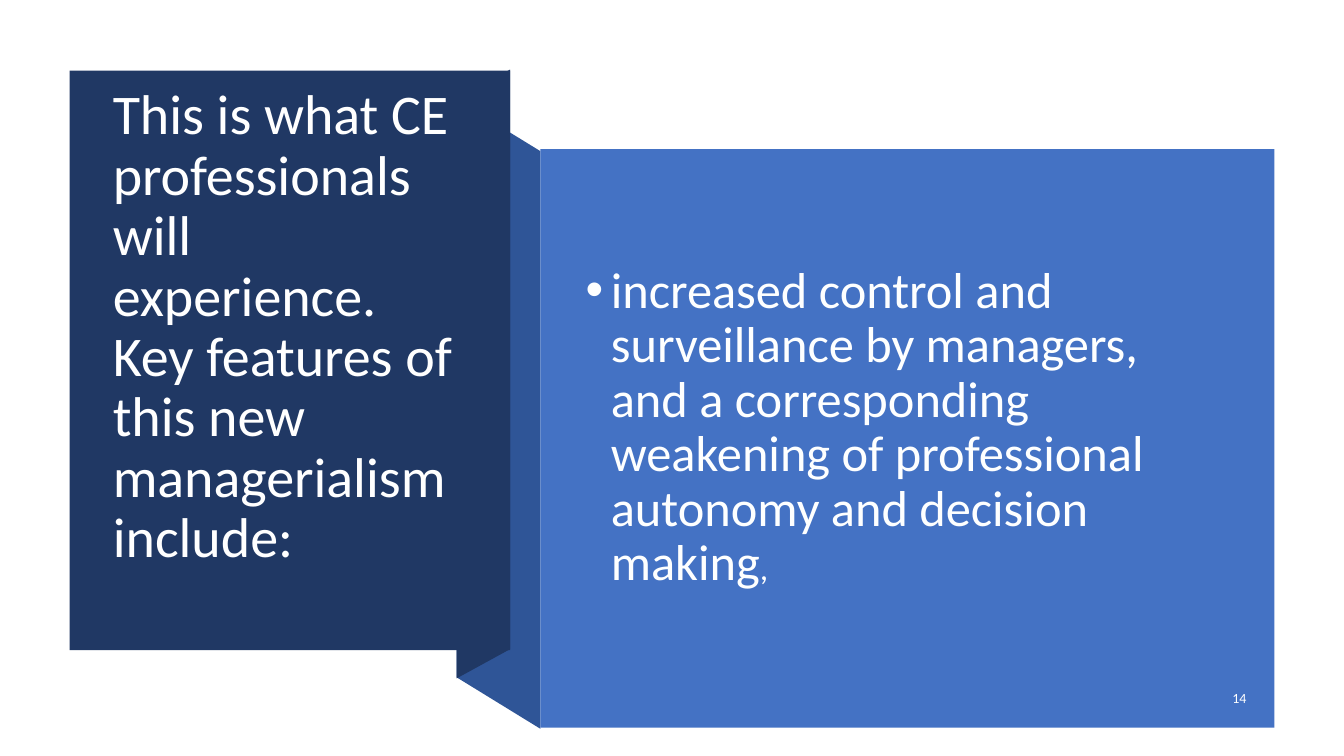
from pptx import Presentation
from pptx.util import Inches, Pt
from pptx.dml.color import RGBColor
from pptx.enum.shapes import MSO_SHAPE as Form
from pptx.enum.text import MSO_ANCHOR as Anchor, PP_ALIGN as Align
from lxml.etree import SubElement
from pptx.oxml.ns import qn

NAVY, FOLD, BLUE = "203864", "2F5597", "4472C4"
WHITE, PALE = "FFFFFF", "FEFFFF"
TITLE = ("This is what CE professionals will experience. "
         "Key features of this new managerialism include:")
POINT = [
    ("increased control and surveillance by managers, and a corresponding "
     "weakening of professional autonomy and decision making", 36),
    (",", 24),
]
NUMBER = "14"
FOLDS = [
    ([(5.36, 7.23), (4.53, 6.72), (4.53, 0.99), (5.36, 1.5)], FOLD),
    ([(5.06, 6.44), (4.53, 6.73), (4.53, 0.98), (5.06, 0.69)], NAVY),
]
PANELS = [((0.69, 0.7, 4.37, 5.75), NAVY), ((5.36, 1.48, 7.28, 5.74), BLUE)]

deck = Presentation()
deck.slide_width, deck.slide_height = Inches(13.33), Inches(7.5)
slide = deck.slides.add_slide(deck.slide_layouts[6])
shapes = slide.shapes


def color(code):
    return RGBColor.from_string(code)


def paint(shape, code):
    shape.shadow.inherit = False
    shape.fill.solid()
    shape.fill.fore_color.rgb = color(code)
    shape.line.fill.background()


def write(box, runs, code, bullet=False):
    frame = shapes.add_textbox(*map(Inches, box)).text_frame
    frame.word_wrap = True
    frame.vertical_anchor = Anchor.MIDDLE
    para = frame.paragraphs[0]
    if bullet:
        props = para._p.get_or_add_pPr()
        props.set("marL", str(Inches(0.25)))
        props.set("indent", str(-Inches(0.25)))
        SubElement(props, qn("a:buFont"), typeface="Arial")
        SubElement(props, qn("a:buChar"), char="•")
    para.font.name = "Calibri"
    para.font.color.rgb = color(code)
    for text, size in runs:
        run = para.add_run()
        run.text = text
        run.font.size = Pt(size)
    return para


for points, code in FOLDS:
    pen = shapes.build_freeform(*map(Inches, points[0]), scale=1.0)
    pen.add_line_segments([(Inches(x), Inches(y)) for x, y in points[1:]])
    paint(pen.convert_to_shape(), code)

for box, code in PANELS:
    paint(shapes.add_shape(Form.RECTANGLE, *map(Inches, box)), code)

title = write((1.02, 0.76, 3.71, 4.99), [(TITLE, 40)], WHITE)
body = write((5.71, 1.88, 6.51, 4.74), POINT, PALE, bullet=True)
for para in (title, body):
    para.line_spacing = 0.9

page = write((11.71, 6.75, 0.75, 0.35), [(NUMBER, 10)], WHITE)
page.alignment = Align.RIGHT
page.space_after = Pt(6)

deck.save("out.pptx")
